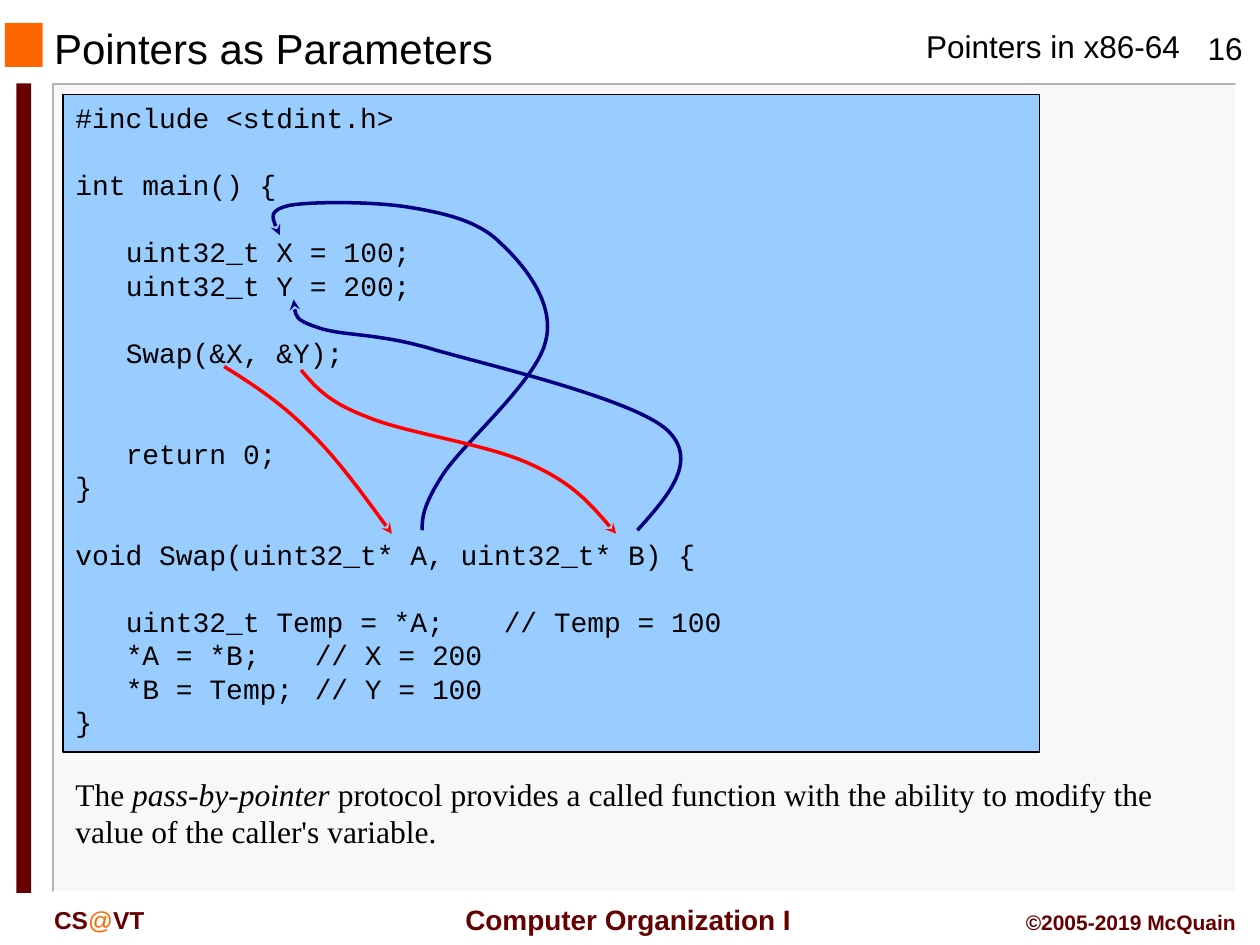
import pptx
import pptx.dml.color
import pptx.enum.shapes
import pptx.enum.text
import pptx.oxml
import pptx.oxml.ns
import pptx.util
from lxml import etree

Cm = pptx.util.Cm
Pt = pptx.util.Pt
qn = pptx.oxml.ns.qn
ALIGN = pptx.enum.text.PP_ALIGN
ANCHOR = pptx.enum.text.MSO_ANCHOR

MAROON = "660000"
ORANGE = "FF6600"
NAVY = "000080"
RED = "FF0000"
LINE_PITCH = 19.2
CHAR_WIDTH = 9.6

CODE = [
    (0, 0, "#include <stdint.h>"),
    (1, 0, "int main() {"),
    (1, 3, "uint32_t X = 100;"),
    (0, 3, "uint32_t Y = 200;"),
    (1, 3, "Swap(&X, &Y);"),
    (2, 3, "return 0;"),
    (0, 0, "}"),
    (1, 0, "void Swap(uint32_t* A, uint32_t* B) {"),
    (1, 3, "uint32_t Temp = *A;\t// Temp = 100"),
    (0, 3, "*A = *B;\t// X = 200"),
    (0, 3, "*B = Temp;\t// Y = 100"),
    (0, 0, "}"),
]
COMMENT_COLUMN = 39

ARROWS = [
    (NAVY, [(7.24, 8.79), (7.24, 8.53), (7.26, 8.28), (7.67, 7.65),
            (8.1, 7.01), (9.55, 5.77), (9.73, 4.98),
            (9.93, 4.22), (9.3, 3.45), (8.84, 3.02),
            (8.41, 2.57), (7.75, 2.41), (7.04, 2.29),
            (6.32, 2.16), (5.03, 2.16), (4.57, 2.24),
            (4.14, 2.34), (4.24, 2.59), (4.37, 2.84)]),
    (NAVY, [(11.58, 8.79), (12.22, 8.08), (12.83, 7.37), (12.17, 6.76),
            (11.48, 6.15), (8.69, 5.49), (7.52, 5.16),
            (6.35, 4.8), (5.61, 4.88), (5.13, 4.7),
            (4.67, 4.55), (4.65, 4.34), (4.65, 4.14)]),
    (RED, [(3.25, 5.49), (3.81, 5.84), (4.37, 6.2), (4.93, 6.76),
           (5.51, 7.32), (6.07, 8.1), (6.63, 8.86)]),
    (RED, [(4.8, 5.56), (5.08, 5.89), (5.33, 6.2), (6.12, 6.5),
           (6.88, 6.83), (8.61, 7.06), (9.45, 7.47),
           (10.29, 7.85), (10.72, 8.36), (11.15, 8.86)]),
]


def rgb(value):
    return pptx.dml.color.RGBColor.from_string(value)


def add_rect(s, x, y, w, h, fill):
    sp = s.shapes.add_shape(pptx.enum.shapes.MSO_SHAPE.RECTANGLE, Cm(x), Cm(y), Cm(w), Cm(h))
    sp.shadow.inherit = False
    sp.fill.solid()
    sp.fill.fore_color.rgb = rgb(fill)
    sp.line.fill.background()
    return sp


def add_outline(s, x, y, points, color, width):
    (x0, y0), *rest = [(Cm(x + px), Cm(y + py)) for px, py in points]
    builder = s.shapes.build_freeform(x0, y0)
    builder.add_line_segments(rest, close=False)
    sp = builder.convert_to_shape()
    sp.shadow.inherit = False
    sp.fill.background()
    sp.line.color.rgb = rgb(color)
    sp.line.width = Pt(width)
    return sp


def add_curved_arrow(s, x, y, points, color):
    sp = add_outline(s, x, y, points, color, 2)
    segments = list(sp.element.iter(qn("a:lnTo")))
    for i in range(0, len(segments), 3):
        curve = etree.Element(qn("a:cubicBezTo"))
        segments[i].addprevious(curve)
        for segment in segments[i:i + 3]:
            curve.append(segment[0])
            segment.getparent().remove(segment)
    etree.SubElement(sp.line._get_or_add_ln(), qn("a:tailEnd"), type="stealth")


def add_text(s, x, y, w, h, runs, size, font="Arial", color="000000", bold=False,
             align=ALIGN.LEFT, anchor=ANCHOR.TOP):
    tf = s.shapes.add_textbox(Cm(x), Cm(y), Cm(w), Cm(h)).text_frame
    tf.word_wrap = True
    tf.vertical_anchor = anchor
    p = tf.paragraphs[0]
    p.alignment = align
    p.font.size = Pt(size)
    p.font.name = font
    p.font.bold = bold
    p.font.color.rgb = rgb(color)
    for text in runs:
        p.add_run().text = text
    return p


def add_header(s, x, y, w):
    add_rect(s, x + 0.1, y + 0.46, 0.76, 0.89, ORANGE)
    add_text(s, x + 0.84, y + 0.48, 16.08, 0.97, ["Pointers as Parameters"], 24, anchor=ANCHOR.MIDDLE)
    add_text(s, x + w - 6.98, y + 0.43, 5.69, 1.02, ["Pointers in x86-64"], 18)
    add_text(s, x + w - 1.55, y + 0.46, 1.7, 1.02, ["16"], 18, align=ALIGN.CENTER)


def add_panel(s, x, y, w, h):
    add_rect(s, x - 0.74, y - 0.02, 0.3, h + 0.04, MAROON)
    add_rect(s, x, y, w, h, "F8F8F8")
    add_outline(s, x, y, [(w, 0), (0, 0), (0, h)], "B2B2B2", 1)
    add_outline(s, x, y, [(w, 0), (w, h), (0, h)], "FFFFFF", 1)


def add_code(s, x, y, w, h):
    sp = add_rect(s, x, y, w, h, "99CCFF")
    sp.line.color.rgb = rgb("000000")
    sp.line.width = Pt(0.75)
    tf = sp.text_frame
    tf.word_wrap = True
    tf.vertical_anchor = ANCHOR.TOP
    for i, (blank_lines, indent, text) in enumerate(CODE):
        p = tf.add_paragraph() if i else tf.paragraphs[0]
        p.text = text
        p.alignment = ALIGN.LEFT
        p.line_spacing = Pt(LINE_PITCH)
        p.space_before = Pt(blank_lines * LINE_PITCH)
        p.font.size = Pt(16)
        p.font.name = "Courier New"
        p.font.color.rgb = rgb("000000")
        pPr = p._p.get_or_add_pPr()
        pPr.set("marL", str(Pt(indent * CHAR_WIDTH)))
        pPr.set("indent", "0")
        if "\t" in text:
            tabs = etree.Element(qn("a:tabLst"))
            etree.SubElement(tabs, qn("a:tab"), pos=str(Pt(COMMENT_COLUMN * CHAR_WIDTH)), algn="l")
            pPr.find(qn("a:defRPr")).addprevious(tabs)
    for color, points in ARROWS:
        add_curved_arrow(s, x, y, points, color)


def add_explanation(s, x, y, w, h):
    runs = ["The ", "pass-by-pointer",
            " protocol provides a called function with the ability to modify the value of the caller's variable."]
    p = add_text(s, x, y, w, h, runs, 18, font="Times New Roman")
    p.runs[1].font.italic = True


def add_footer(s, x, y, w):
    p = add_text(s, x, y + 0.05, 3.81, 0.84, ["CS", "@", "VT"], 14, color=MAROON, bold=True)
    p.runs[1].font.bold = False
    p.runs[1].font.color.rgb = rgb(ORANGE)
    add_text(s, x + 8.13, y, 7.39, 0.94, ["Computer Organization I"], 16, color=MAROON, bold=True,
             align=ALIGN.CENTER, anchor=ANCHOR.MIDDLE)
    add_text(s, x + w - 5.28, y + 0.15, 5.28, 0.76, ["©2005-2019 McQuain"], 12, color=MAROON,
             bold=True, align=ALIGN.RIGHT)


def main():
    prs = pptx.Presentation()
    prs.slide_width = Cm(25.4)
    prs.slide_height = Cm(19.05)
    s = prs.slides.add_slide(prs.slide_layouts[6])
    add_panel(s, 1.07, 1.7, 23.85, 16.28)
    add_header(s, 0, 0, 25.4)
    add_code(s, 1.27, 1.9, 19.69, 13.26)
    add_explanation(s, 1.27, 15.49, 23.5, 1.8)
    add_footer(s, 0.84, 18.06, 24.33)
    prs.save("out.pptx")


if __name__ == "__main__":
    main()
